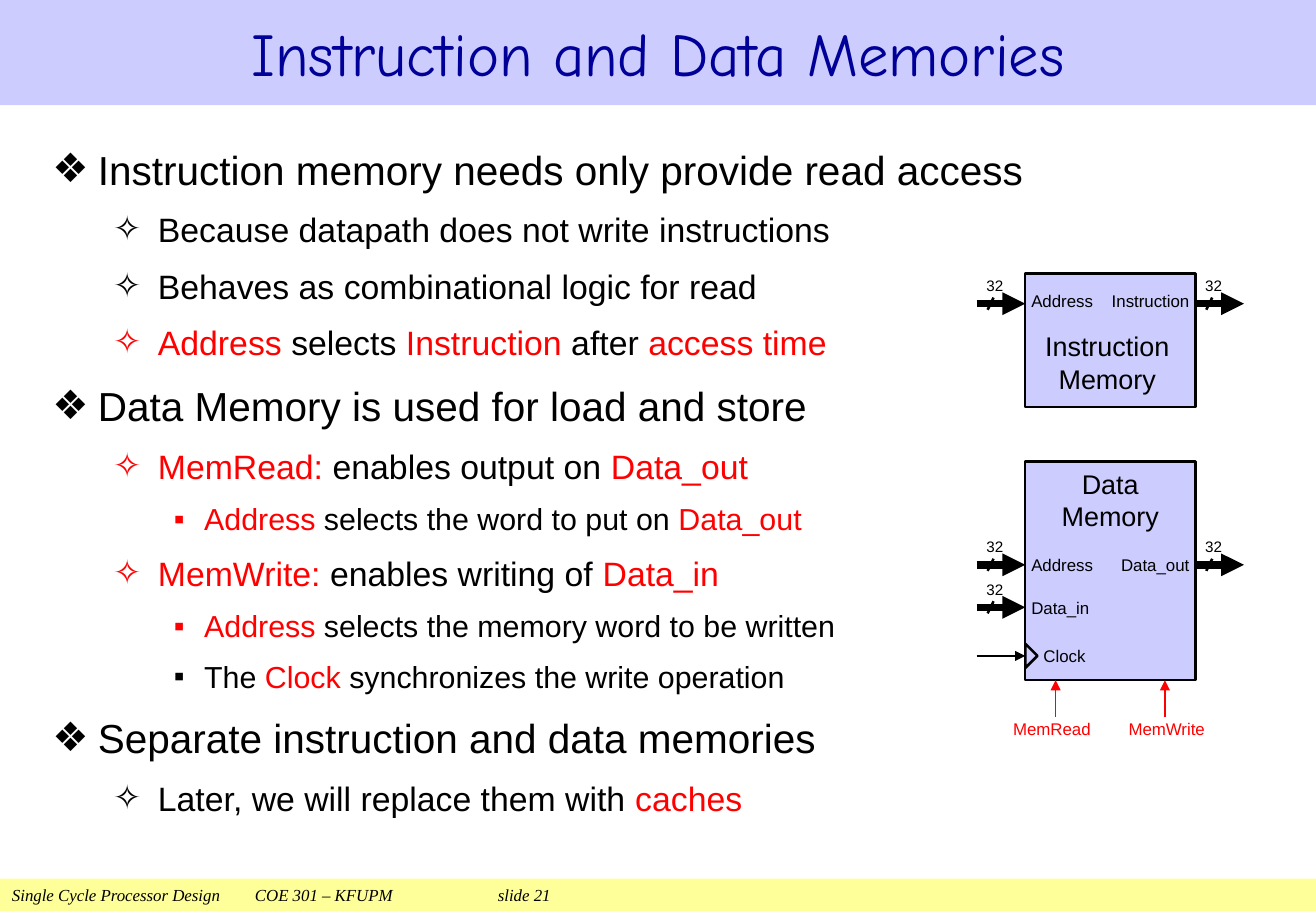
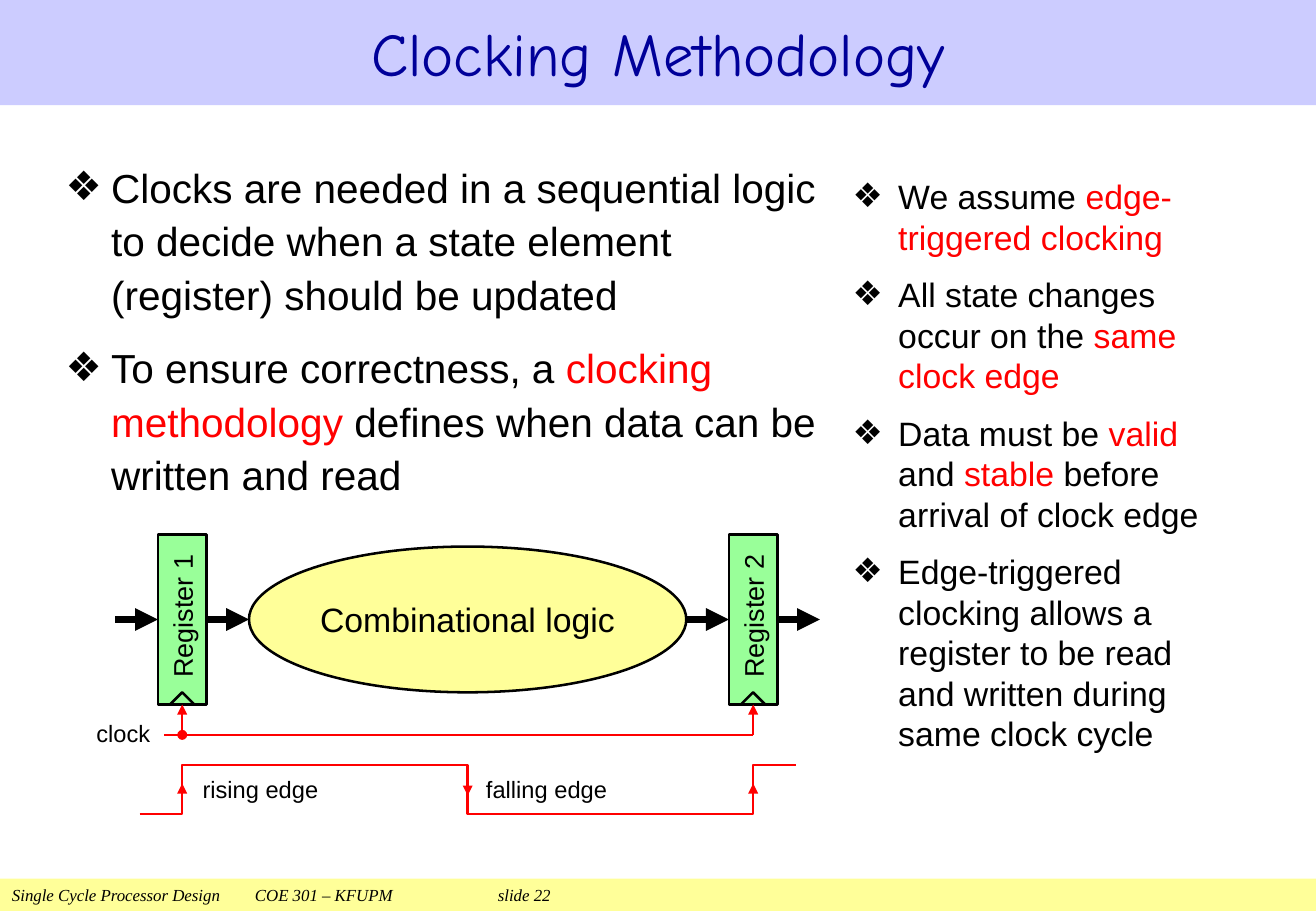
from dataclasses import dataclass

from lxml import etree
from pptx import Presentation
from pptx import util as u
from pptx.dml.color import RGBColor
from pptx.enum import shapes as kinds, text as txt
from pptx.oxml.ns import qn

WIDTH, HEIGHT = 780, 540
BLACK, RED, NAVY = "000000", "FF0000", "000099"
LILAC, YELLOW, GREEN = "CCCCFF", "FFFF99", "99FF99"
SANS, TITLE_FONT, SERIF = "Arial", "Comic Neue", "Times New Roman"
LEFT, CENTER, RIGHT = txt.PP_ALIGN.LEFT, txt.PP_ALIGN.CENTER, txt.PP_ALIGN.RIGHT
TOP, MIDDLE, BOTTOM = (txt.MSO_ANCHOR.TOP, txt.MSO_ANCHOR.MIDDLE,
                       txt.MSO_ANCHOR.BOTTOM)
RECT = kinds.MSO_SHAPE.RECTANGLE
TRIANGLE = kinds.MSO_SHAPE.ISOSCELES_TRIANGLE
NO_INSETS = (0, 0, 0, 0)


@dataclass(frozen=True)
class Box:
    """A rectangle in points."""
    left: float
    top: float
    width: float
    height: float


@dataclass(frozen=True)
class Level:
    bullet: str
    indent: float
    hang: float


@dataclass(frozen=True)
class Item:
    """A list entry; words between bars are red."""
    words: str
    level: int = 0


@dataclass(frozen=True)
class ListStyle:
    sizes: tuple
    before: float  # share of the font size
    lines: float
    insets: tuple


@dataclass(frozen=True)
class Memory:
    name: tuple
    box: Box
    anchor: txt.MSO_ANCHOR
    insets: tuple
    inputs: tuple  # (label, y)
    output: tuple
    label_shift: float = 0


LEVELS = (Level("❖", 27, 27), Level("✧", 62.6, 26.6), Level("▪", 90, 18))


# Text
def color(value: str) -> RGBColor:
    return RGBColor.from_string(value)


def add_span(para, words: str, size: float, hue: str = BLACK,
             font: str = SANS, italic: bool = False) -> None:
    span = para.add_run()
    span.text = words
    span.font.name = font
    span.font.size = u.Pt(size)
    span.font.italic = italic
    span.font.color.rgb = color(hue)


def set_frame(shape, insets: tuple, anchor=MIDDLE):
    frame = shape.text_frame
    frame.word_wrap = True
    frame.auto_size = txt.MSO_AUTO_SIZE.NONE
    frame.vertical_anchor = anchor
    (frame.margin_left, frame.margin_top,
     frame.margin_right, frame.margin_bottom) = map(u.Pt, insets)
    return frame


def add_paras(frame, lines: tuple, size: float, align=CENTER,
              hue: str = BLACK) -> None:
    for index, line in enumerate(lines):
        para = frame.add_paragraph() if index else frame.paragraphs[0]
        para.alignment = align
        add_span(para, line, size, hue)


def add_label(page, box: Box, words: str, size: float, align=LEFT,
              hue: str = BLACK) -> None:
    shape = page.shapes.add_textbox(*place(box))
    add_paras(set_frame(shape, NO_INSETS), (words,), size, align, hue)


def fill_list(holder, box: Box, items: tuple, style: ListStyle) -> None:
    move(holder, box)
    frame = set_frame(holder, style.insets, TOP)
    for index, item in enumerate(items):
        para = frame.add_paragraph() if index else frame.paragraphs[0]
        level, size = LEVELS[item.level], style.sizes[item.level]
        para.level = item.level
        para.alignment = LEFT
        para.line_spacing = style.lines
        para.space_before = u.Pt(size * style.before)
        for number, words in enumerate(item.words.split("|")):
            if words:
                add_span(para, words, size, RED if number % 2 else BLACK)
        props = para._p.get_or_add_pPr()
        props.set("marL", str(u.Pt(level.indent)))
        props.set("indent", str(u.Pt(-level.hang)))
        etree.SubElement(props, qn("a:buChar")).set("char", level.bullet)


# Shapes and lines
def place(box: Box) -> tuple:
    return tuple(map(u.Pt, (box.left, box.top, box.width, box.height)))


def move(shape, box: Box) -> None:
    shape.left, shape.top, shape.width, shape.height = place(box)


def add_shape(page, kind, box: Box, fill: str, outline: bool = True,
              turn: float = 0):
    shape = page.shapes.add_shape(kind, *place(box))
    shape.shadow.inherit = False
    shape.rotation = turn
    shape.fill.solid()
    shape.fill.fore_color.rgb = color(fill)
    if outline:
        shape.line.color.rgb = color(BLACK)
        shape.line.width = u.Pt(1.5)
    else:
        shape.line.fill.background()
    return shape


def add_line(page, start: tuple, end: tuple, weight: float, hue: str = BLACK,
             head: str = "", tail: str = "") -> None:
    line = page.shapes.add_connector(kinds.MSO_CONNECTOR.STRAIGHT,
                                     *map(u.Pt, start + end))
    line.line.color.rgb = color(hue)
    line.line.width = u.Pt(weight)
    stroke = line.line._get_or_add_ln()
    for tag, kind in (("a:headEnd", head), ("a:tailEnd", tail)):
        if kind:
            etree.SubElement(stroke, qn(tag)).set("type", kind)
    etree.SubElement(line._element.spPr, qn("a:effectLst"))


def add_arrow(page, start: tuple, end: tuple, weight: float,
              hue: str = BLACK, head: str = "") -> None:
    add_line(page, start, end, weight, hue, head, "triangle")


# Title band and footer shared by the slides
def add_page(deck, layout: int, heading: str, number: int):
    page = deck.slides.add_slide(deck.slide_layouts[layout])
    title = page.shapes.title
    move(title, Box(0, 0, WIDTH, 62.4))
    title.fill.solid()
    title.fill.fore_color.rgb = color(LILAC)
    para = set_frame(title, (7.2, 3.6, 7.2, 3.6)).paragraphs[0]
    para.alignment = CENTER
    add_span(para, heading, 36, NAVY, TITLE_FONT)

    footer = add_shape(page, RECT, Box(0, 520.8, WIDTH, 19.2), YELLOW, False)
    para = set_frame(footer, (7.2, 0, 7.2, 0)).paragraphs[0]
    para.alignment = LEFT
    tabs = etree.SubElement(para._p.get_or_add_pPr(), qn("a:tabLst"))
    for position in (144, 288):
        tab = etree.SubElement(tabs, qn("a:tab"))
        tab.set("pos", str(u.Pt(position)))
        tab.set("algn", "l")
    for words in ("Single Cycle Processor Design", "\tCOE 301 – KFUPM",
                  f"\tslide {number}"):
        add_span(para, words, 10, font=SERIF, italic=True)
    return page


# Memories slide
def add_bus(page, x: float, y: float) -> None:
    add_arrow(page, (x, y), (x + 28.8, y), 4.5)
    add_line(page, (x + 10, y - 3.6), (x + 6.5, y + 3.6), 1.5)
    add_label(page, Box(x + 3.6, y - 18, 14.4, 14.4), "32", 9, CENTER)


def add_memory(page, memory: Memory) -> None:
    box = memory.box
    right = box.left + box.width
    shape = add_shape(page, RECT, box, LILAC)
    add_paras(set_frame(shape, memory.insets, memory.anchor), memory.name, 16)
    for words, y in memory.inputs:
        add_bus(page, box.left - 28.8, y)
        add_label(page, Box(box.left + 3.6, y - 9 + memory.label_shift, 50, 18),
                  words, 10)
    words, y = memory.output
    add_bus(page, right, y)
    add_label(page, Box(right - 57.6, y - 9 + memory.label_shift, 54, 18),
              words, 10, RIGHT)


def build_memories(deck) -> None:
    page = add_page(deck, 1, "Instruction and Data Memories", 21)
    items = (
        Item("Instruction memory needs only provide read access"),
        Item("Because datapath does not write instructions", 1),
        Item("Behaves as combinational logic for read", 1),
        Item("|Address| selects |Instruction| after |access time|", 1),
        Item("Data Memory is used for load and store"),
        Item("|MemRead:| enables output on |Data_out|", 1),
        Item("|Address| selects the word to put on |Data_out|", 2),
        Item("|MemWrite:| enables writing of |Data_in|", 1),
        Item("|Address| selects the memory word to be written", 2),
        Item("The |Clock| synchronizes the write operation", 2),
        Item("Separate instruction and data memories"),
        Item("Later, we will replace them with |caches|", 1),
    )
    fill_list(page.placeholders[1], Box(23.8, 79.2, 733, 432), items,
              ListStyle((24, 20, 18), 0.35, 1.1, (7.2, 3.6, 7.2, 3.6)))

    left, bottom, clock = 607.7, 403.2, 388.8
    add_memory(page, Memory(
        ("Instruction", "Memory"), Box(left, 162, 100.8, 79.2), BOTTOM,
        (0, 0, 3.6, 7.2), (("Address", 180),), ("Instruction", 180), -1.8))
    add_memory(page, Memory(
        ("Data", "Memory"), Box(left, 273.6, 100.8, 129.6), TOP,
        (0.7, 3.6, 0.7, 3.6), (("Address", 334.8), ("Data_in", 360)),
        ("Data_out", 334.8)))

    # Clock input and control signals
    add_arrow(page, (left - 28.8, clock), (left, clock), 1)
    add_shape(page, TRIANGLE, Box(left - 3.6, clock - 3.6, 14.4, 7.2), LILAC,
              turn=90)
    add_label(page, Box(left + 10.8, clock - 10.8, 36, 21.6), "Clock", 10)
    for words, x, label_left in (("MemRead", 625.7, 600.5),
                                 ("MemWrite", 690.5, 668.9)):
        add_arrow(page, (x, bottom + 21.6), (x, bottom), 1, RED)
        add_label(page, Box(label_left, bottom + 21.6, 54, 14.4), words, 10,
                  hue=RED)


# Clocking slide
def add_register(page, x: float, y: float, name: str, clock: float,
                 head: str) -> None:
    shape = add_shape(page, RECT, Box(x - 50.4, y - 14.4, 100.8, 28.8), GREEN,
                      turn=270)
    add_paras(set_frame(shape, (4, 0, 0, 0)), (name,), 16)
    add_shape(page, TRIANGLE, Box(x - 7.2, y + 43.2, 14.4, 7.2), GREEN)
    add_arrow(page, (x, clock), (x, y + 50.4), 1.5, RED, head)
    for start in (x - 39.6, x + 14.4):
        add_arrow(page, (start, y), (start + 25.2, y), 4.5)


def build_clocking(deck) -> None:
    page = add_page(deck, 3, "Clocking Methodology", 22)
    needs = (
        Item("Clocks are needed in a sequential logic to decide when a state "
             "element (register) should be updated"),
        Item("To ensure correctness, a |clocking methodology| defines when "
             "data can be written and read"),
    )
    rules = (
        Item("We assume |edge-triggered clocking|"),
        Item("All state changes occur on the |same clock edge|"),
        Item("Data must be |valid| and |stable| before arrival of clock edge"),
        Item("Edge-triggered clocking allows a register to be read and "
             "written during same clock cycle"),
    )
    insets = (0, 3.6, 0, 3.6)
    holders = [holder for holder in page.placeholders
               if holder.placeholder_format.idx in (1, 2)]
    fill_list(holders[0], Box(38.9, 90, 450.7, 208), needs,
              ListStyle((24,), 0.5, 1.1, insets))
    fill_list(holders[1], Box(505.4, 100.8, 208.8, 360), rules,
              ListStyle((20,), 0.5, 1.0, insets))

    # Registers around the logic
    first, middle, last = 108, 277.2, 446.4
    axis, clock = 367.2, 435.6
    logic = add_shape(page, kinds.MSO_SHAPE.OVAL,
                      Box(middle - 129.6, axis - 43.2, 259.2, 86.4), YELLOW)
    add_paras(set_frame(logic, NO_INSETS), ("Combinational logic",), 20)
    add_line(page, (last, clock), (97.2, clock), 1.5, RED)
    add_register(page, first, axis, "Register 1", clock, "oval")
    add_register(page, last, axis, "Register 2", clock, "")

    # Clock waveform
    high, low = 453.6, 482.4
    corners = ((first, low), (first, high), (middle, high), (middle, low),
               (last, low), (last, high), (last + 25.2, high))
    outline = page.shapes.build_freeform(u.Pt(first - 25.2), u.Pt(low))
    outline.add_line_segments([(u.Pt(x), u.Pt(y)) for x, y in corners],
                              close=False)
    wave = outline.convert_to_shape()
    wave.shadow.inherit = False
    wave.fill.background()
    wave.line.color.rgb = color(RED)
    wave.line.width = u.Pt(1.5)
    center = (high + low) / 2
    for x, rise in ((first, 3.6), (middle, -3.6), (last, 3.6)):
        add_arrow(page, (x, center + rise), (x, center - rise), 1, RED)
    for words, box in (("clock", Box(50.4, 422.6, 45.4, 23.8)),
                       ("rising edge", Box(116.6, 457.2, 75.6, 21.6)),
                       ("falling edge", Box(280.8, 457.2, 86.4, 21.6))):
        add_label(page, box, words, 14, CENTER)


def main() -> None:
    deck = Presentation()
    deck.slide_width, deck.slide_height = u.Pt(WIDTH), u.Pt(HEIGHT)
    build_memories(deck)
    build_clocking(deck)
    deck.save("out.pptx")


if __name__ == "__main__":
    main()
